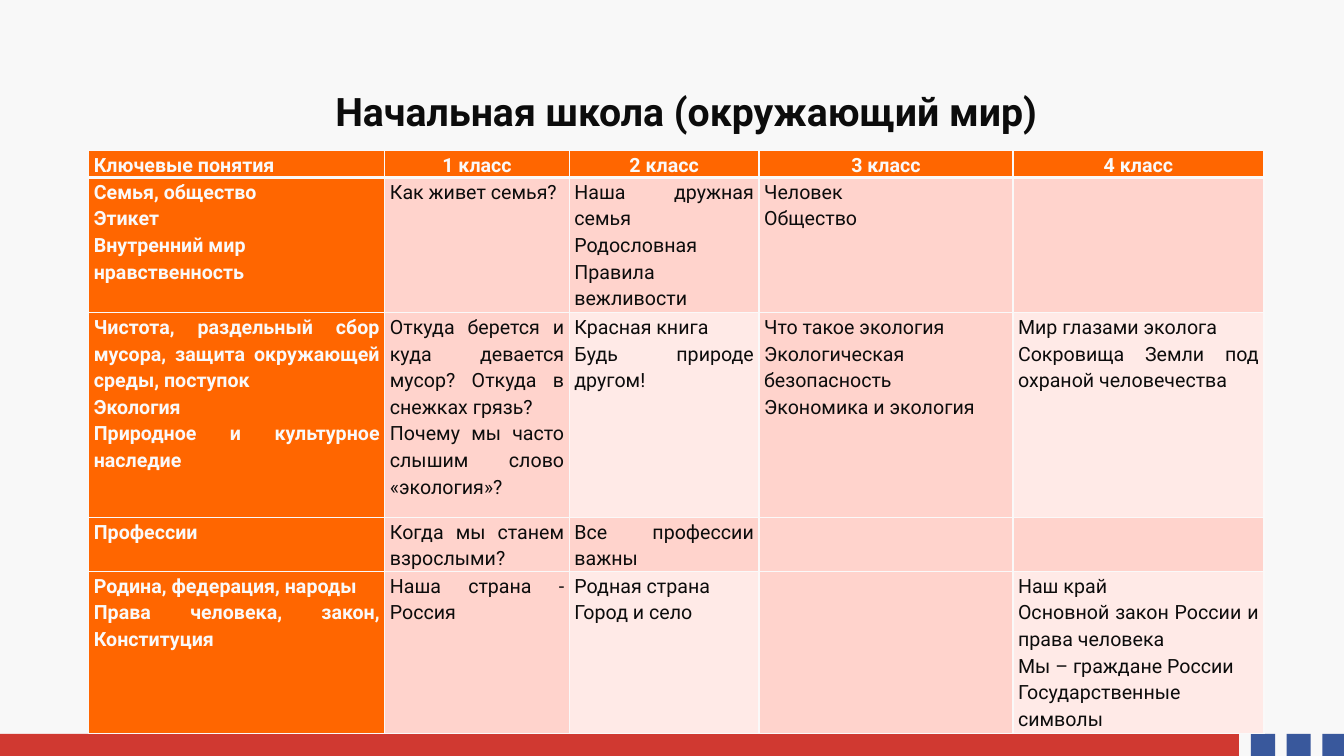
from dataclasses import dataclass
from typing import Any

from lxml.etree import SubElement
from pptx import Presentation
from pptx.dml.color import RGBColor
from pptx.enum.shapes import MSO_SHAPE
from pptx.enum.text import MSO_ANCHOR, PP_ALIGN
from pptx.oxml.ns import qn
from pptx.util import Pt

FONT = "Roboto"
INK, LIGHT, PAPER = "0C0C0C", "FAF9F9", "F8F8F8"
ORANGE, PINK, PALE_PINK = "FF6600", "FFD3CC", "FFEAE7"
RED, BLUE = "C70A00", "0A3085"


@dataclass
class Stripe:
    left: float
    width: float
    color: str


@dataclass
class Topic:
    height: float
    cells: list[str]  # one line per paragraph


STRIPES = [Stripe(0, 884.9, RED)] + [
    Stripe(893.5 + 25.5 * place, 17.3, BLUE) for place in range(3)
]
STRIPE_TOP, STRIPE_HEIGHT = 524.2, 15.8

COLUMN_WIDTHS = [211.5, 131.8, 135.5, 181.4, 179.3]
TOPICS = [
    Topic(19, ["Ключевые понятия", "1 класс", "2 класс", "3 класс", "4 класс"]),
    Topic(95, [
        "Семья, общество\nЭтикет\nВнутренний мир\nнравственность",
        "Как живет семья?",
        "Наша дружная семья\nРодословная\nПравила вежливости",
        "Человек\nОбщество",
        "",
    ]),
    Topic(146.2, [
        "Чистота, раздельный сбор мусора, защита окружающей среды, поступок\n"
        "Экология\nПриродное и культурное наследие",
        "Откуда берется и куда девается мусор? Откуда в снежках грязь?\n"
        "Почему мы часто слышим слово «экология»?",
        "Красная книга\nБудь природе другом!",
        "Что такое экология\nЭкологическая безопасность\nЭкономика и экология",
        "Мир глазами эколога\nСокровища Земли под охраной человечества",
    ]),
    Topic(38, [
        "Профессии", "Когда мы станем взрослыми?", "Все профессии важны", "", "",
    ]),
    Topic(114, [
        "Родина, федерация, народы\nПрава человека, закон, Конституция",
        "Наша страна - Россия",
        "Родная страна\nГород и село",
        "",
        "Наш край\nОсновной закон России и права человека\n"
        "Мы – граждане России\nГосударственные символы",
    ]),
]


def rgb(color: str) -> RGBColor:
    return RGBColor.from_string(color)


def set_values(target: Any, values: dict[str, Any]) -> None:
    for name, value in values.items():
        setattr(target, name, value)


def paint(fill: Any, color: str) -> None:
    fill.solid()
    fill.fore_color.rgb = rgb(color)


def write(frame: Any, text: str, size: float, color: str, bold: bool,
          align: PP_ALIGN, spacing: float) -> None:
    frame.text = text
    for paragraph in frame.paragraphs:
        set_values(paragraph, {"alignment": align, "line_spacing": spacing})
        set_values(paragraph.font, {"name": FONT, "size": Pt(size), "bold": bold})
        paragraph.font.color.rgb = rgb(color)


def draw_stripe(slide: Any, stripe: Stripe) -> None:
    bar = slide.shapes.add_shape(MSO_SHAPE.RECTANGLE, Pt(stripe.left), Pt(STRIPE_TOP),
                                 Pt(stripe.width), Pt(STRIPE_HEIGHT))
    bar.shadow.inherit = False
    bar.line.fill.background()
    paint(bar.fill, stripe.color)
    tint = bar.fill._xPr.find(qn("a:solidFill"))[0]
    SubElement(tint, qn("a:alpha"), val="80000")


def draw_borders(cell: Any, widths: dict[str, float]) -> None:
    properties = cell._tc.get_or_add_tcPr()
    for side in "LRTB":
        border = SubElement(properties, qn(f"a:ln{side}"),
                            w=str(Pt(widths.get(side, 1))))
        solid = SubElement(border, qn("a:solidFill"))
        SubElement(solid, qn("a:srgbClr"), val=LIGHT)


def draw_cell(cell: Any, text: str, row: int, column: int) -> None:
    heading = row == 0 or column == 0
    set_values(cell, {"margin_left": Pt(3.6), "margin_right": Pt(3.6),
                      "margin_top": Pt(0), "margin_bottom": Pt(0)})
    # A thick rule separates the class names from the topics
    draw_borders(cell, {0: {"B": 3}, 1: {"T": 3}}.get(row, {}))
    even = row % 2 == 0 and column % 2 == 0
    paint(cell.fill, ORANGE if heading else PALE_PINK if even else PINK)
    class_name = row == 0 and column > 0
    write(cell.text_frame, text, 14, LIGHT if heading else INK, heading,
          PP_ALIGN.CENTER if class_name else PP_ALIGN.JUSTIFY, 1.15)


def draw_curriculum(slide: Any) -> None:
    curriculum = slide.shapes.add_table(
        len(TOPICS), len(COLUMN_WIDTHS), Pt(63.4), Pt(107.5),
        Pt(sum(COLUMN_WIDTHS)), Pt(sum(topic.height for topic in TOPICS))).table
    curriculum.horz_banding = False
    for column, width in zip(curriculum.columns, COLUMN_WIDTHS):
        column.width = Pt(width)
    for row, topic in enumerate(TOPICS):
        curriculum.rows[row].height = Pt(topic.height)
        for column, text in enumerate(topic.cells):
            draw_cell(curriculum.cell(row, column), text, row, column)


def main() -> None:
    deck = Presentation()
    set_values(deck, {"slide_width": Pt(960), "slide_height": Pt(540)})
    slide = deck.slides.add_slide(deck.slide_layouts[6])
    paint(slide.background.fill, PAPER)

    # Flag stripes along the bottom
    for stripe in STRIPES:
        draw_stripe(slide, stripe)

    # Heading
    heading = slide.shapes.add_textbox(Pt(94.3), Pt(28.8), Pt(791.3), Pt(104.4))
    set_values(heading.text_frame,
               {"word_wrap": True, "vertical_anchor": MSO_ANCHOR.MIDDLE})
    write(heading.text_frame, "Начальная школа (окружающий мир)", 28, INK, True,
          PP_ALIGN.CENTER, 0.9)

    # Topics by class
    draw_curriculum(slide)
    deck.save("out.pptx")


if __name__ == "__main__":
    main()
